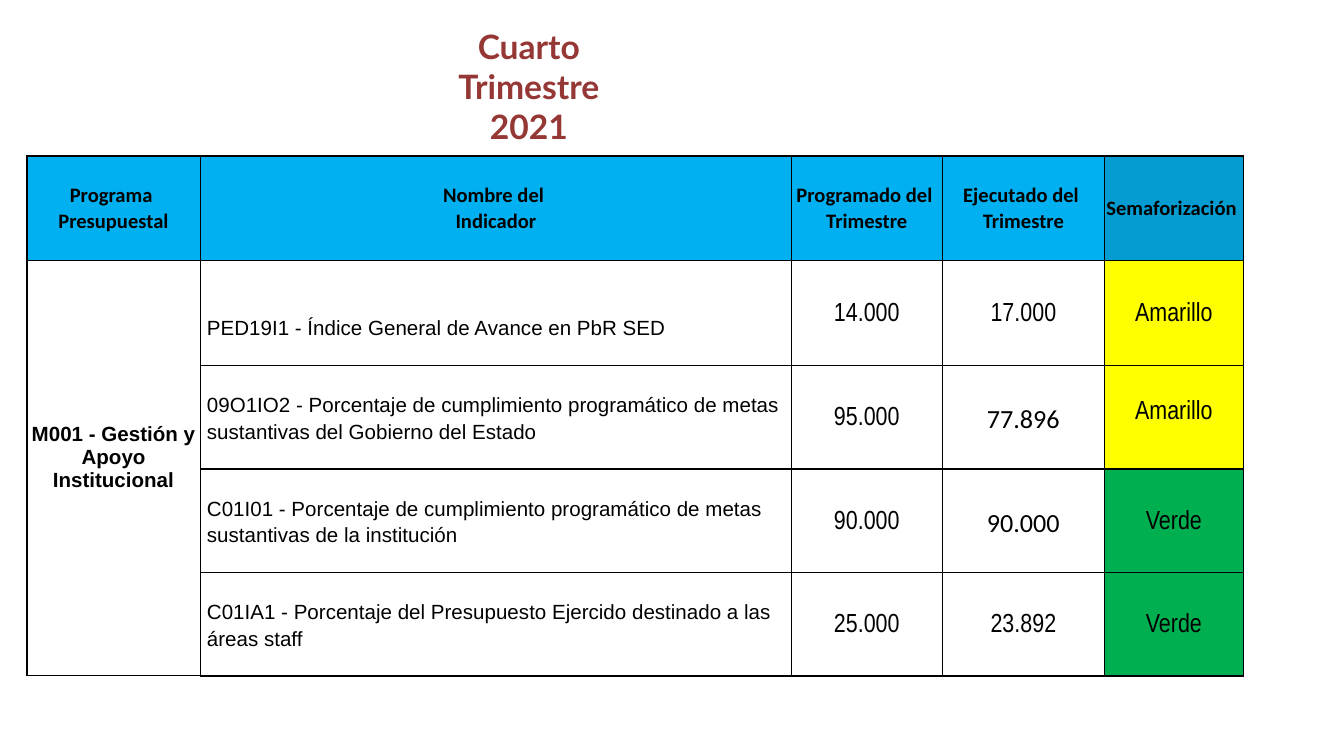
from dataclasses import dataclass

from lxml.etree import SubElement
from pptx import Presentation
from pptx.dml.color import RGBColor as Rgb
from pptx.enum.text import MSO_ANCHOR as Anchor, MSO_AUTO_SIZE as AutoSize, PP_ALIGN as Align
from pptx.oxml.ns import qn
from pptx.util import Inches, Pt


@dataclass(frozen=True)
class Theme:
    """Colours, fonts and type sizes of the slide."""
    ink: str = "000000"
    heading: str = "953735"
    header: str = "00B0F0"
    header_status: str = "059CD1"
    title_font: str = "Lato"
    header_font: str = "Calibri"
    body_font: str = "Arial"
    figure_font: str = "Arial Narrow"
    title_size: int = 18
    body_size: int = 11
    figure_size: int = 14


THEME = Theme()
STATUS_FILLS = {"Amarillo": "FFFF00", "Verde": "00B050"}
SLIDE_WIDTH = Inches(10)
SLIDE_HEIGHT = SLIDE_WIDTH * 9 // 16
GRID_COLUMNS = 1000
GRID_ROWS = GRID_COLUMNS * 9 / 16

COLUMN_SPANS = (129, 440, 112, 121, 103)
ROW_SPANS = (78, 78, 77, 77, 77)
HEADERS = ("Programa \nPresupuestal", "Nombre del \nIndicador", "Programado del \nTrimestre",
           "Ejecutado del \nTrimestre", "Semaforización ")
PROGRAM = "M001 - Gestión y Apoyo Institucional"
INDICATORS = (
    ("PED19I1 - Índice General de Avance en PbR SED", "14.000", "17.000", "Amarillo"),
    ("09O1IO2 - Porcentaje de cumplimiento programático de metas sustantivas del Gobierno del Estado",
     "95.000", "77.896", "Amarillo"),
    ("C01I01 - Porcentaje de cumplimiento programático de metas sustantivas de la institución",
     "90.000", "90.000", "Verde"),
    ("C01IA1 - Porcentaje del Presupuesto Ejercido destinado a las áreas staff",
     "25.000", "23.892", "Verde"),
)
CALIBRI_RESULTS = ("77.896", "90.000")
HEADER_INSETS = (0, 0, 0, 0)
PROGRAM_INSETS = (1, 1, 1, 17)
BODY_INSETS = (5, 0, 5, 0)
LOWERED_INSETS = (5, 20, 5, 0)
RAISED_INSETS = (5, 0, 5, 9)


def across(columns):
    """Return the length of a number of grid columns."""
    return round(SLIDE_WIDTH * columns / GRID_COLUMNS)


def down(rows):
    """Return the length of a number of grid rows."""
    return round(SLIDE_HEIGHT * rows / GRID_ROWS)


def write(frame, text, font, size, color=THEME.ink, bold=False, align=Align.CENTER, spacing=None):
    """Fill a text frame and format its paragraphs and runs."""
    frame.text = text
    for paragraph in frame.paragraphs:
        paragraph.alignment = align
        paragraph.line_spacing = spacing
        for run in paragraph.runs:
            run.font.name = font
            run.font.size = Pt(size)
            run.font.bold = bold
            run.font.color.rgb = Rgb.from_string(color)


def set_borders(cell, left=0.5, bottom=1):
    """Draw the four borders of a cell."""
    properties = cell._tc.get_or_add_tcPr()
    for side, width in (("lnL", left), ("lnR", 0.5), ("lnT", 1), ("lnB", bottom)):
        border = SubElement(properties, qn(f"a:{side}"), w=str(Pt(width)))
        SubElement(SubElement(border, qn("a:solidFill")), qn("a:srgbClr"), val=THEME.ink)


def style_cell(cell, insets, fill=None, **borders):
    """Set the insets, anchor, borders and fill of a cell."""
    left, top, right, bottom = insets
    cell.margin_left, cell.margin_right = across(left), across(right)
    cell.margin_top, cell.margin_bottom = down(top), down(bottom)
    cell.vertical_anchor = Anchor.MIDDLE
    set_borders(cell, **borders)
    if fill:
        cell.fill.solid()
        cell.fill.fore_color.rgb = Rgb.from_string(fill)
    else:
        cell.fill.background()


def add_title(slide):
    """Place and format the quarter heading."""
    title = slide.shapes.title
    title.left, title.top = across(311), down(14)
    title.width, title.height = across(165), down(101)
    frame = title.text_frame
    frame.word_wrap = True
    frame.auto_size = AutoSize.SHAPE_TO_FIT_TEXT
    frame.vertical_anchor = Anchor.TOP
    write(frame, "Cuarto Trimestre 2021", THEME.title_font, THEME.title_size, THEME.heading, bold=True)


def fill_header(table):
    """Write the header row."""
    for index, label in enumerate(HEADERS):
        cell = table.cell(0, index)
        write(cell.text_frame, label, THEME.header_font, THEME.body_size, bold=True)
        fill = THEME.header_status if index == len(HEADERS) - 1 else THEME.header
        style_cell(cell, HEADER_INSETS, fill, left=0.5 if index else 1)


def fill_program(table):
    """Merge the first column under the header and write the program."""
    last = len(INDICATORS)
    program = table.cell(1, 0)
    program.merge(table.cell(last, 0))
    write(program.text_frame, PROGRAM, THEME.body_font, THEME.body_size, bold=True)
    for row in range(1, last + 1):
        style_cell(table.cell(row, 0), PROGRAM_INSETS, left=1, bottom=0.5)


def fill_indicator(table, row, indicator):
    """Write one indicator with its figures and status."""
    name, planned, achieved, status = indicator
    name_cell, planned_cell, achieved_cell, status_cell = (table.cell(row, i) for i in range(1, 5))
    write(name_cell.text_frame, name, THEME.body_font, THEME.body_size, align=Align.LEFT, spacing=1.15)
    style_cell(name_cell, LOWERED_INSETS if row == 1 else BODY_INSETS)
    achieved_font = THEME.header_font if achieved in CALIBRI_RESULTS else THEME.figure_font
    figures = ((planned_cell, planned, THEME.figure_font), (achieved_cell, achieved, achieved_font),
               (status_cell, status, THEME.figure_font))
    for cell, text, font in figures:
        write(cell.text_frame, text, font, THEME.figure_size, spacing=1.15)
        raised = row == 2 and cell is status_cell
        style_cell(cell, RAISED_INSETS if raised else BODY_INSETS, STATUS_FILLS.get(text))


def add_indicator_table(slide):
    """Add the table of indicators."""
    frame = slide.shapes.add_table(len(ROW_SPANS), len(COLUMN_SPANS), across(20), down(116),
                                   across(sum(COLUMN_SPANS)), down(sum(ROW_SPANS)))
    table = frame.table
    table.first_row = table.horz_banding = False
    for column, span in zip(table.columns, COLUMN_SPANS):
        column.width = across(span)
    for row, span in zip(table.rows, ROW_SPANS):
        row.height = down(span)
    fill_header(table)
    fill_program(table)
    for number, indicator in enumerate(INDICATORS, start=1):
        fill_indicator(table, number, indicator)


def main():
    """Build and save the slide."""
    presentation = Presentation()
    presentation.slide_width, presentation.slide_height = SLIDE_WIDTH, SLIDE_HEIGHT
    slide = presentation.slides.add_slide(presentation.slide_layouts[5])
    add_title(slide)
    add_indicator_table(slide)
    presentation.save("out.pptx")


if __name__ == "__main__":
    main()
